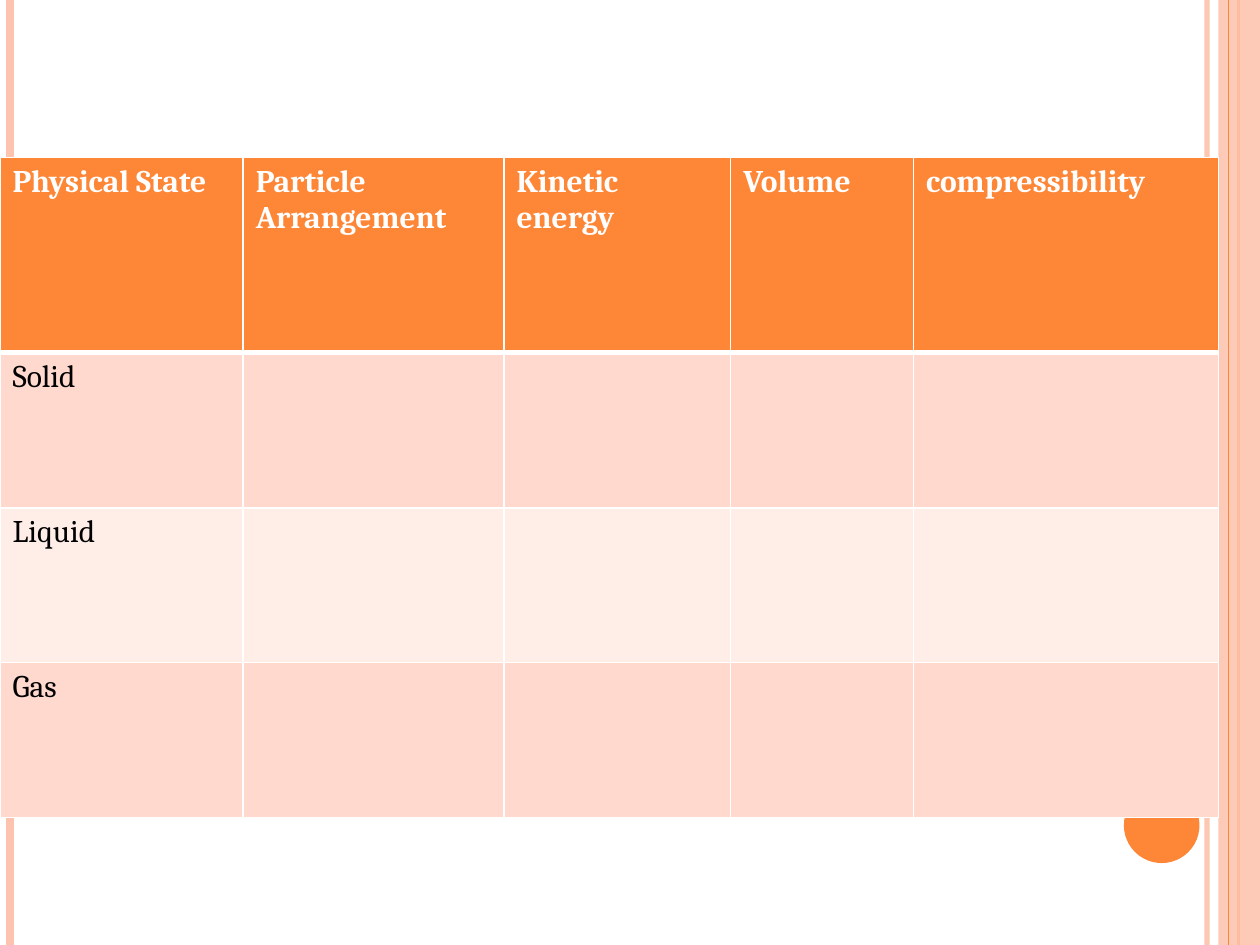
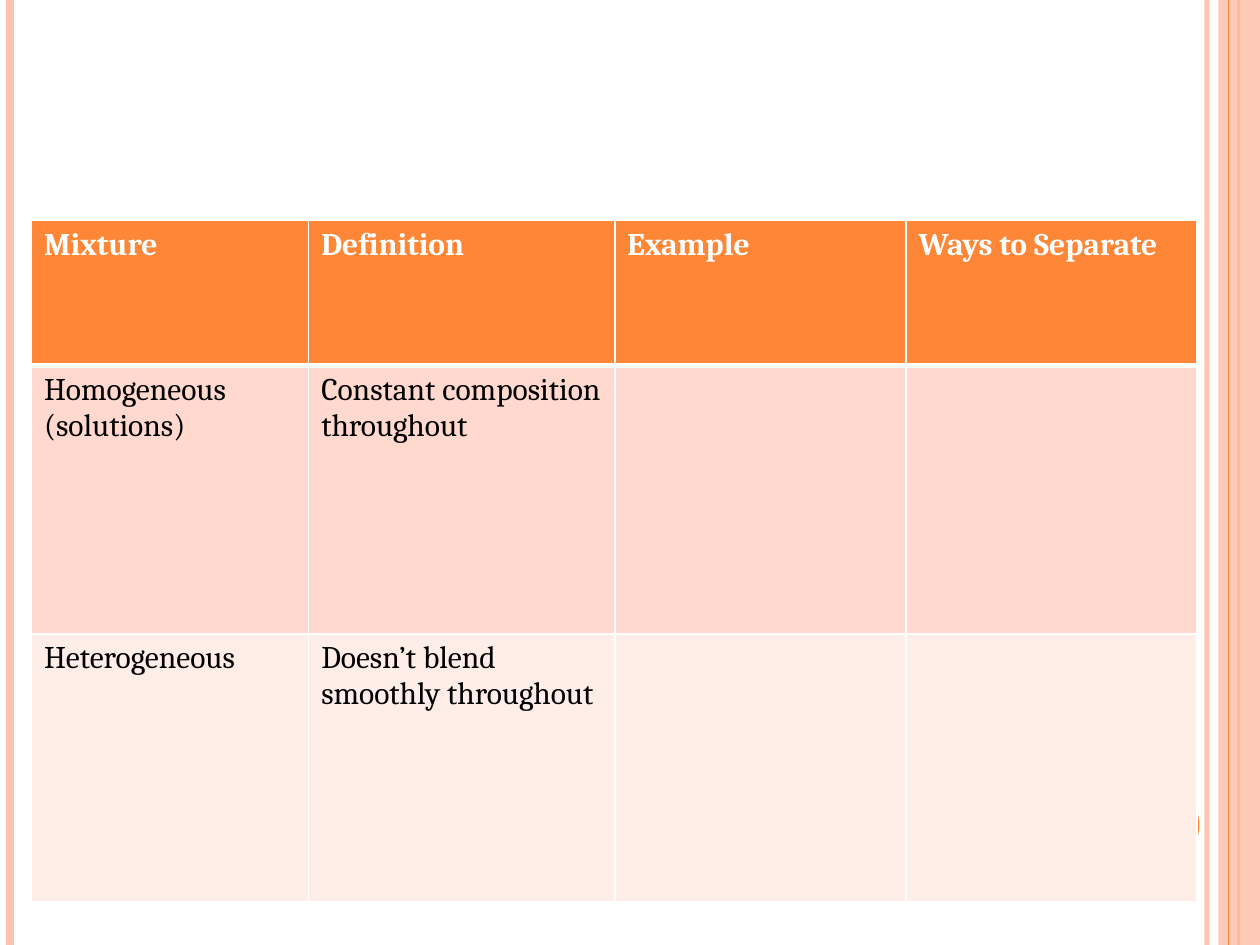
from lxml import etree
from pptx import Presentation
from pptx.dml.color import RGBColor
from pptx.enum import shapes
from pptx.oxml import ns
from pptx.util import Inches, Pt

WHITE = RGBColor(0xFF, 0xFF, 0xFF)
BLACK = RGBColor(0x00, 0x00, 0x00)
ORANGE = RGBColor(0xFE, 0x86, 0x37)
PEACH = RGBColor(0xFE, 0xC3, 0xAE)
BANDS = [RGBColor(0xFF, 0xD9, 0xCE), RGBColor(0xFF, 0xED, 0xE8)]
FONT = "Cambria"
WIDTH, HEIGHT = 10, 7.5


def add(parent, tag, **attrs):
    return etree.SubElement(parent, ns.qn(tag), attrs)


def fade(shape, percent):
    """Make the first colour of the shape partly transparent."""
    color = next(shape._element.spPr.iter(ns.qn("a:srgbClr")))
    add(color, "a:alpha", val=str(percent * 1000))


def rule(slide, x, color, weight):
    """Draw a vertical line over the full height of the slide."""
    line = slide.shapes.add_connector(
        shapes.MSO_CONNECTOR.STRAIGHT,
        Inches(x), Inches(0), Inches(x), Inches(HEIGHT))
    line.line.color.rgb = color
    line.line.width = Pt(weight)
    add(line._element.spPr, "a:effectLst")
    return line


def block(slide, kind, box, color):
    shape = slide.shapes.add_shape(kind, *map(Inches, box))
    shape.shadow.inherit = False
    shape.fill.solid()
    shape.fill.fore_color.rgb = color
    shape.line.fill.background()
    return shape


def frame(slide):
    """Draw the side bands and the round badge that all slides share."""
    slide.background.fill.solid()
    slide.background.fill.fore_color.rgb = WHITE
    fade(rule(slide, 9.58, PEACH, 3), 93)
    rule(slide, 0.08, PEACH, 4.5)
    rule(slide, 9.83, ORANGE, 1.5)
    band = block(slide, shapes.MSO_SHAPE.RECTANGLE,
                 (9.67, 0, WIDTH - 9.67, HEIGHT), PEACH)
    fade(band, 87)
    rule(slide, 9.75, ORANGE, 0.75)
    block(slide, shapes.MSO_SHAPE.OVAL, (8.92, 6.25, 0.6, 0.6), ORANGE)


def edge(cell, **weights):
    """Give the cell white borders; weights are points by side."""
    props = cell._tc.get_or_add_tcPr()
    for side in "LRTB":
        line = add(props, f"a:ln{side}", w=str(Pt(weights.get(side, 1))))
        add(add(line, "a:solidFill"), "a:srgbClr", val=str(WHITE))


def style(cell, row):
    if row == 0:
        edge(cell, B=3)
    elif row == 1:
        edge(cell, T=3)
    else:
        edge(cell)
    cell.fill.solid()
    cell.fill.fore_color.rgb = BANDS[(row - 1) % 2] if row else ORANGE
    for run in cell.text_frame.paragraphs[0].runs:
        run.font.name = FONT
        run.font.size = Pt(18)
        run.font.bold = row == 0
        run.font.color.rgb = BLACK if row else WHITE


def grid(slide, left, top, widths, heights, texts):
    """Place a table; cells without a text stay empty."""
    box = left, top, sum(widths), sum(heights)
    table = slide.shapes.add_table(
        len(heights), len(widths), *map(Inches, box)).table
    for column, width in zip(table.columns, widths):
        column.width = Inches(width)
    for r, height in enumerate(heights):
        table.rows[r].height = Inches(height)
        for c, text in enumerate(texts[r]):
            table.cell(r, c).text_frame.text = text
        for cell in table.rows[r].cells:
            style(cell, r)


def main():
    deck = Presentation()
    deck.slide_width, deck.slide_height = Inches(WIDTH), Inches(HEIGHT)
    states = (0, 1.25, [1.93, 2.07, 1.8, 1.45, 2.42], [1.55] + [1.23] * 3, [
        ["Physical State", "Particle Arrangement", "Kinetic energy",
         "Volume", "compressibility"],
        ["Solid"],
        ["Liquid"],
        ["Gas"],
    ])
    mixtures = (0.25, 1.75, [2.2, 2.43, 2.31, 2.31], [1.15] + [2.13] * 2, [
        ["Mixture", "Definition", "Example", "Ways to Separate"],
        ["Homogeneous (solutions)", "Constant composition throughout"],
        ["Heterogeneous", "Doesn’t blend smoothly throughout"],
    ])
    for content in (states, mixtures):
        slide = deck.slides.add_slide(deck.slide_layouts[6])
        frame(slide)
        grid(slide, *content)
    deck.save("out.pptx")


if __name__ == "__main__":
    main()
